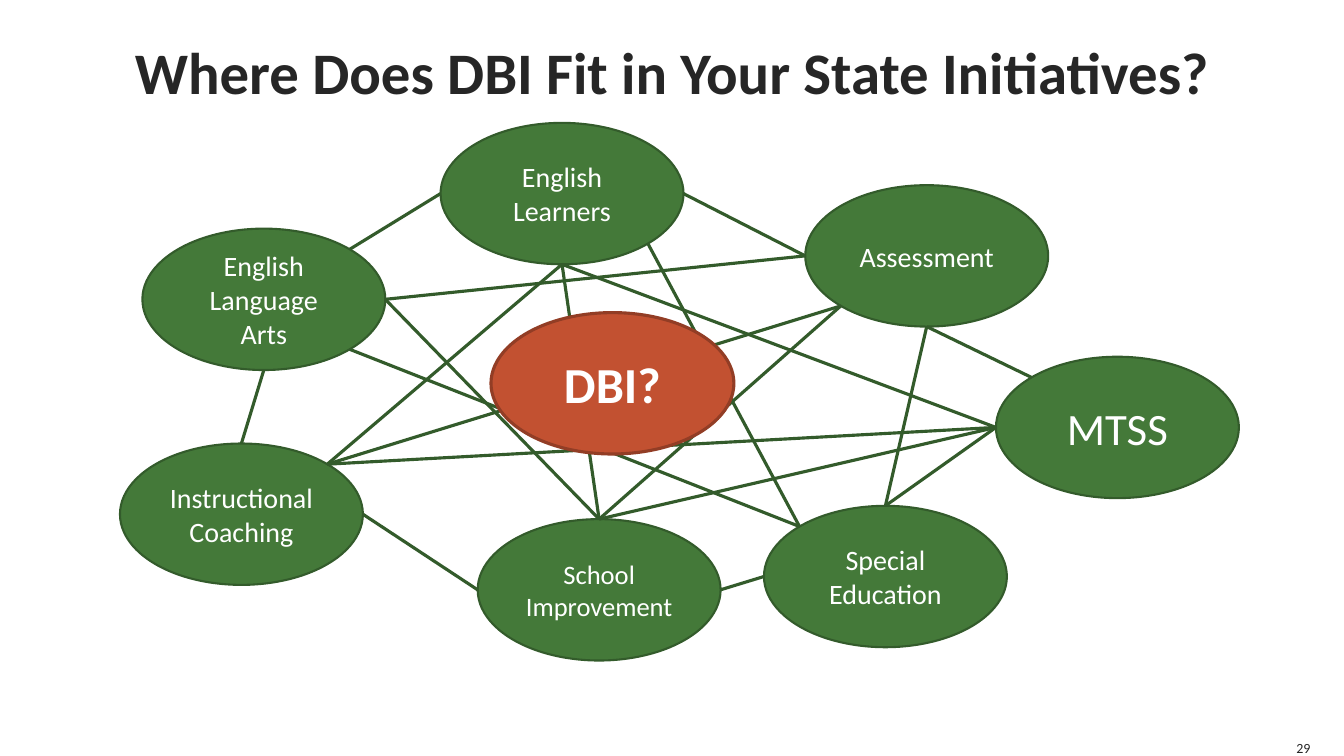
from math import sqrt

from lxml.etree import SubElement
from pptx import Presentation
from pptx.dml.color import RGBColor
from pptx.enum.shapes import MSO_CONNECTOR, MSO_SHAPE
from pptx.enum.text import MSO_ANCHOR, PP_ALIGN
from pptx.oxml.ns import qn
from pptx.util import Pt

GREEN = RGBColor(0x44, 0x79, 0x39)
DARK_GREEN = RGBColor(0x33, 0x5B, 0x2B)
RUST = RGBColor(0xC2, 0x51, 0x31)
DARK_RUST = RGBColor(0x92, 0x3D, 0x25)
INK = RGBColor(0x26, 0x26, 0x26)
WHITE = RGBColor(0xFF, 0xFF, 0xFF)

SLIDE_WIDTH, SLIDE_HEIGHT = 960, 540
OVAL_WIDTH, OVAL_HEIGHT = 173.5, 101

# Initiative: offset from the diagram's corner and text size
INITIATIVES = {
    "English Learners": (229, 0, 20),
    "English Language Arts": (16, 75.5, 20),
    "Instructional Coaching": (0, 229, 20),
    "Assessment": (489.5, 44.5, 20),
    "MTSS": (625.7, 167, 32),
    "School Improvement": (255.5, 283, 19),
    "Special Education": (460, 273.5, 20),
}
DBI_OFFSET = (265, 135.5)

# Points on an oval's rim, in units of its half axes
DIAGONAL = sqrt(0.5)
RIM = {
    "N": (0, -1), "S": (0, 1), "W": (-1, 0), "E": (1, 0),
    "NW": (-DIAGONAL, -DIAGONAL), "NE": (DIAGONAL, -DIAGONAL),
    "SW": (-DIAGONAL, DIAGONAL), "SE": (DIAGONAL, DIAGONAL),
}
LINKS = [
    ("English Language Arts", "NE", "English Learners", "W"),
    ("English Language Arts", "E", "Assessment", "W"),
    ("Assessment", "W", "English Learners", "E"),
    ("Assessment", "S", "MTSS", "NW"),
    ("MTSS", "W", "School Improvement", "N"),
    ("MTSS", "W", "Special Education", "N"),
    ("Assessment", "SW", "School Improvement", "N"),
    ("Assessment", "SW", "Instructional Coaching", "NE"),
    ("English Learners", "S", "MTSS", "W"),
    ("English Learners", "S", "Instructional Coaching", "NE"),
    ("English Language Arts", "E", "School Improvement", "N"),
    ("Special Education", "N", "Assessment", "S"),
    ("English Learners", "S", "School Improvement", "N"),
    ("English Language Arts", "S", "Instructional Coaching", "N"),
    ("MTSS", "W", "Instructional Coaching", "NE"),
    ("School Improvement", "W", "Instructional Coaching", "E"),
    ("Special Education", "W", "School Improvement", "E"),
    ("English Language Arts", "SE", "Special Education", "NW"),
    ("Special Education", "NW", "English Learners", "SE"),
]


def apply_format(target, values):
    for name, value in values.items():
        setattr(target, name, value)


def write(frame, wording, size, color, bold=False, align=PP_ALIGN.CENTER):
    paragraph = frame.paragraphs[0]
    paragraph.alignment = align
    run = paragraph.add_run()
    run.text = wording
    apply_format(run.font, {"name": "Calibri", "size": Pt(size), "bold": bold})
    run.font.color.rgb = color


def add_label(slide, box, wording, size, anchor, wrap=True, **style):
    frame = slide.shapes.add_textbox(*map(Pt, box)).text_frame
    apply_format(frame, {
        "margin_left": 0, "margin_right": 0, "margin_top": 0, "margin_bottom": 0,
        "word_wrap": wrap, "vertical_anchor": anchor,
    })
    write(frame, wording, size, INK, **style)


def add_oval(slide, left, top, wording, size, fill, outline, width, bold=False):
    oval = slide.shapes.add_shape(
        MSO_SHAPE.OVAL, Pt(left), Pt(top), Pt(OVAL_WIDTH), Pt(OVAL_HEIGHT))
    oval.shadow.inherit = False
    oval.fill.solid()
    oval.fill.fore_color.rgb = fill
    oval.line.color.rgb = outline
    oval.line.width = Pt(width)
    apply_format(oval.text_frame, {"word_wrap": True, "vertical_anchor": MSO_ANCHOR.MIDDLE})
    write(oval.text_frame, wording, size, WHITE, bold)


def add_link(slide, start, end):
    link = slide.shapes.add_connector(MSO_CONNECTOR.STRAIGHT, *map(Pt, start + end))
    link.line.color.rgb = DARK_GREEN
    link.line.width = Pt(2.25)
    SubElement(link._element.spPr, qn("a:effectLst"))


def add_diagram(slide, left, top):
    def rim_point(initiative, side):
        x, y, _ = INITIATIVES[initiative]
        across, down = RIM[side]
        return (left + x + OVAL_WIDTH / 2 * (1 + across),
                top + y + OVAL_HEIGHT / 2 * (1 + down))

    # Initiatives
    for initiative, (x, y, size) in INITIATIVES.items():
        add_oval(slide, left + x, top + y, initiative, size, GREEN, DARK_GREEN, 1.5)

    # Links between them
    for first, first_side, second, second_side in LINKS:
        add_link(slide, rim_point(first, first_side), rim_point(second, second_side))

    # DBI in the middle, over the links
    x, y = DBI_OFFSET
    add_oval(slide, left + x, top + y, "DBI?", 36, RUST, DARK_RUST, 2.25, bold=True)


def main():
    presentation = Presentation()
    apply_format(presentation, {"slide_width": Pt(SLIDE_WIDTH), "slide_height": Pt(SLIDE_HEIGHT)})
    slide = presentation.slides.add_slide(presentation.slide_layouts[6])

    # Title and slide number
    add_label(slide, (36, 0, 888, 101), "Where Does DBI Fit in Your State Initiatives?",
              42, MSO_ANCHOR.MIDDLE, bold=True)
    add_label(slide, (924, 528, 12, 12), "29", 10, MSO_ANCHOR.BOTTOM,
              wrap=False, align=PP_ALIGN.RIGHT)

    add_diagram(slide, 85.7, 87.8)
    presentation.save("out.pptx")


if __name__ == "__main__":
    main()
